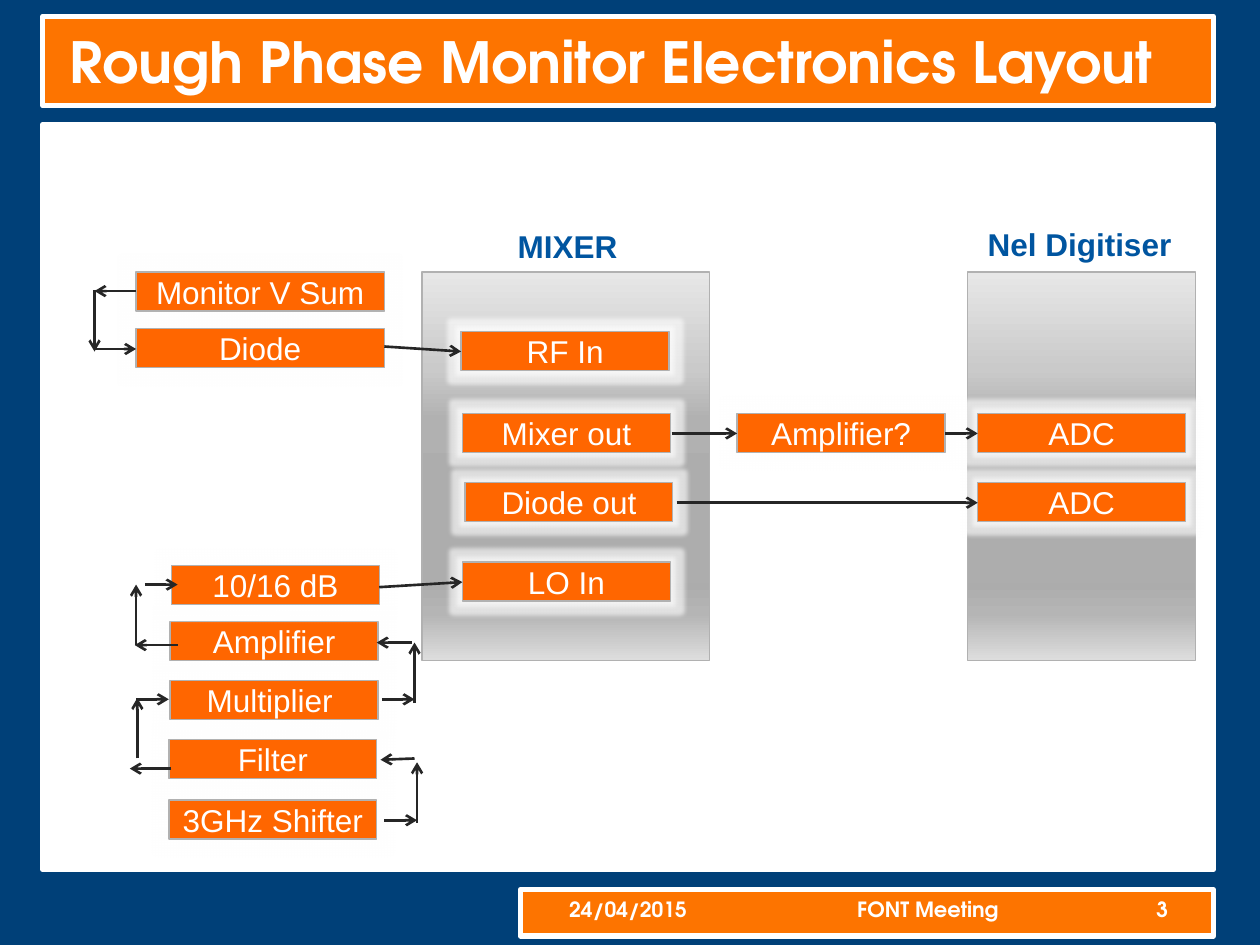
"""Build the phase monitor electronics layout slide."""
import pptx
import pptx.util
import pptx.dml.color
import pptx.enum.shapes
import pptx.enum.text
import pptx.oxml.ns
from lxml import etree

Inches = pptx.util.Inches
Pt = pptx.util.Pt
RGBColor = pptx.dml.color.RGBColor
Align = pptx.enum.text.PP_ALIGN
Anchor = pptx.enum.text.MSO_ANCHOR
qn = pptx.oxml.ns.qn

NAVY = RGBColor(0x00, 0x40, 0x78)
BLUE = RGBColor(0x00, 0x55, 0xA0)
AMBER = RGBColor(0xFD, 0x74, 0x00)
ORANGE = RGBColor(0xFF, 0x66, 0x00)
WHITE = RGBColor(0xFF, 0xFF, 0xFF)
GREY = RGBColor(0xB1, 0xB1, 0xB1)
DARK = RGBColor(0x26, 0x26, 0x26)
STOPS = [(0, RGBColor(0xE7, 0xE7, 0xE7)), (25, RGBColor(0xCA, 0xCA, 0xCA)),
         (38, GREY), (55, RGBColor(0xAD, 0xAD, 0xAD)),
         (80, RGBColor(0xAC, 0xAC, 0xAC)), (88, RGBColor(0xB5, 0xB5, 0xB5)),
         (100, RGBColor(0xDD, 0xDD, 0xDD))]
HEAD = "TeX Gyre Adventor"
BODY = "Arial"


def write(shape, text, font=BODY, size=18, color=WHITE, bold=False,
          align=Align.CENTER, anchor=Anchor.MIDDLE, wrap=True):
    """Put formatted text in a shape."""
    frame = shape.text_frame
    frame.word_wrap = wrap
    frame.vertical_anchor = anchor
    para = frame.paragraphs[0]
    para.alignment = align
    run = para.add_run()
    run.text = text
    run.font.name, run.font.size, run.font.bold = font, Pt(size), bold
    run.font.color.rgb = color


def child(node, tag, **attrs):
    """Add a DrawingML child element."""
    return etree.SubElement(node, qn("a:" + tag), attrs)


class Sketch:
    """Holds the slide and draws each kind of element on it."""

    def __init__(self, slide):
        self.slide = slide
        self.shapes = slide.shapes
        slide.background.fill.solid()
        slide.background.fill.fore_color.rgb = NAVY

    def rect(self, x, y, w, h, fill, line, width):
        shape = self.shapes.add_shape(
            pptx.enum.shapes.MSO_SHAPE.RECTANGLE,
            Inches(x), Inches(y), Inches(w), Inches(h))
        shape.shadow.inherit = False
        shape.fill.solid()
        shape.fill.fore_color.rgb = fill
        shape.line.color.rgb = line
        shape.line.width = Pt(width)
        return shape

    def panel(self, x, y, w, h, fill):
        self.rect(x, y, w, h, fill, WHITE, 3)

    def rack(self, x, w):
        shape = self.rect(x, 2.16, w, 3.08, GREY, GREY, 0.75)
        shape.fill.gradient()
        shape.fill.gradient_angle = 270
        stops = shape._element.spPr.find(".//" + qn("a:gsLst"))
        for stop in list(stops):
            stops.remove(stop)
        for pos, color in STOPS:
            stop = child(stops, "gs", pos=str(pos * 1000))
            child(stop, "srgbClr", val=str(color))

    def block(self, text, x, y, w=1.65):
        shape = self.rect(x, y, w, 0.31, ORANGE, GREY, 0.75)
        glow = child(shape._element.spPr.find(qn("a:effectLst")), "glow",
                     rad=str(Inches(0.07)))
        child(child(glow, "srgbClr", val=str(WHITE)), "alpha", val="60000")
        write(shape, text)

    def title(self, text):
        shape = self.shapes.title
        self.shapes._spTree.append(shape._element)
        shape.left, shape.top = Inches(0.5), Inches(0.21)
        shape.width, shape.height = Inches(9), Inches(0.55)
        frame = shape.text_frame
        frame.auto_size = pptx.enum.text.MSO_AUTO_SIZE.NONE
        frame.margin_left = frame.margin_right = Inches(0.05)
        write(shape, text, font=HEAD, size=32.4, bold=True, align=Align.LEFT)

    def label(self, text, x, y, w, h, **style):
        shape = self.shapes.add_textbox(
            Inches(x), Inches(y), Inches(w), Inches(h))
        write(shape, text, bold=True, **style)

    def arrow(self, x1, y1, x2, y2):
        line = self.shapes.add_connector(
            pptx.enum.shapes.MSO_CONNECTOR.STRAIGHT,
            Inches(x1), Inches(y1), Inches(x2), Inches(y2))
        line.line.color.rgb = DARK
        line.line.width = Pt(1.5)
        child(line.line._get_or_add_ln(), "tailEnd", type="arrow")
        child(line._element.spPr, "effectLst")


def main():
    """Draw and save the slide."""
    deck = pptx.Presentation()
    deck.slide_width, deck.slide_height = Inches(10), Inches(7.5)
    art = Sketch(deck.slides.add_slide(deck.slide_layouts[5]))

    art.panel(0.34, 0.99, 9.29, 5.91, WHITE)
    art.panel(4.13, 7.06, 5.5, 0.37, AMBER)
    art.panel(0.34, 0.13, 9.29, 0.71, AMBER)
    art.rack(7.68, 1.81)
    art.rack(3.35, 2.28)
    art.title("Rough Phase Monitor Electronics Layout")

    for text, x, w in [("24/04/2015", 4.18, 1.61),
                       ("FONT Meeting", 5.78, 3.17), ("3", 8.95, 0.55)]:
        art.label(text, x, 7.06, w, 0.31, font=HEAD, size=12)

    for text, x, y in [
            ("3GHz Shifter", 1.34, 6.35), ("Filter", 1.34, 5.87),
            ("Amplifier", 1.35, 4.93), ("Multiplier ", 1.35, 5.4),
            ("RF In", 3.66, 2.63), ("LO In", 3.67, 4.46),
            ("Mixer out", 3.67, 3.28), ("Diode out", 3.69, 3.83),
            ("10/16 dB", 1.36, 4.49), ("ADC", 7.76, 3.28),
            ("Amplifier?", 5.85, 3.28), ("ADC", 7.76, 3.83)]:
        art.block(text, x, y)
    for text, y in [("Monitor V Sum", 2.16), ("Diode", 2.61)]:
        art.block(text, 1.08, y, w=1.97)

    for text, x, y, w in [("MIXER", 4.01, 1.75, 1),
                          ("Nel Digitiser", 7.74, 1.74, 1.69)]:
        art.label(text, x, y, w, 0.4, color=BLUE, align=Align.LEFT,
                  anchor=Anchor.TOP, wrap=False)

    for ends in [
            (1.08, 2.31, 0.75, 2.31), (0.75, 2.3, 0.75, 2.79),
            (0.75, 2.77, 1.08, 2.77), (3.05, 2.75, 3.66, 2.79),
            (3.01, 4.66, 3.67, 4.62), (1.36, 6.1, 1.03, 6.1),
            (1.09, 6.02, 1.09, 5.54), (1.08, 5.55, 1.34, 5.55),
            (3.05, 6.51, 3.31, 6.51), (3.31, 6.53, 3.31, 6.05),
            (3.29, 6.02, 3.02, 6.03), (1.41, 5.12, 1.07, 5.12),
            (1.08, 5.12, 1.08, 4.64), (1.15, 4.64, 1.41, 4.64),
            (3.03, 5.55, 3.29, 5.55), (3.29, 5.58, 3.29, 5.1),
            (3.27, 5.1, 2.99, 5.1), (5.33, 3.44, 5.85, 3.44),
            (7.5, 3.44, 7.76, 3.44), (5.37, 3.99, 7.76, 3.99)]:
        art.arrow(*ends)

    deck.save("out.pptx")


if __name__ == "__main__":
    main()
